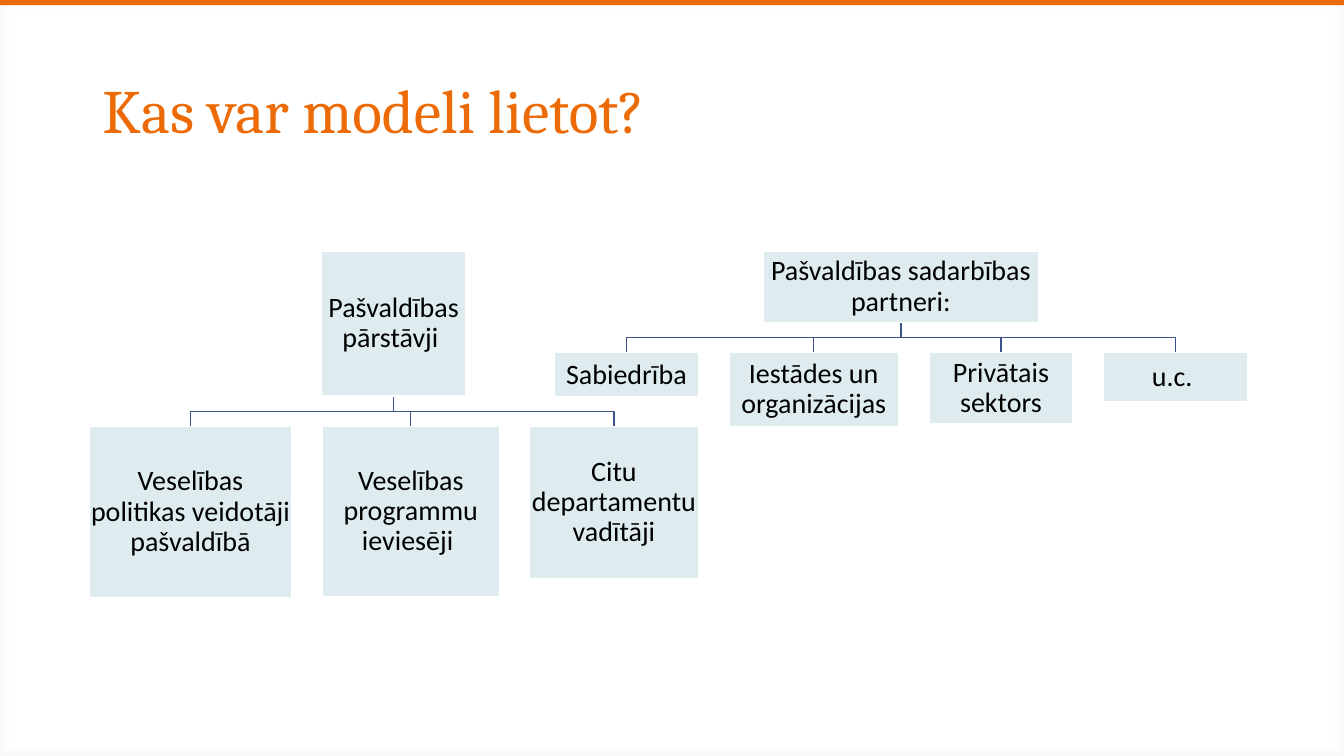
"""Build a slide with two small organisation trees under a title."""
from pptx import Presentation
from pptx.dml.color import RGBColor
from pptx.enum.shapes import MSO_SHAPE
from pptx.enum.text import MSO_ANCHOR, PP_ALIGN
from pptx.oxml import parse_xml
from pptx.util import Pt

RECT = MSO_SHAPE.RECTANGLE
MIDDLE = MSO_ANCHOR.MIDDLE
LEFT, CENTER = PP_ALIGN.LEFT, PP_ALIGN.CENTER
ORANGE = RGBColor(0xED, 0x6B, 0x06)
PALE = RGBColor(0xDE, 0xEC, 0xEF)
NAVY = RGBColor(0x3B, 0x52, 0x8A)
WHITE = RGBColor(0xFF, 0xFF, 0xFF)
BLACK = RGBColor(0, 0, 0)

TITLE = "Kas var modeli lietot?"
TREES = [
    {"left": 63.6, "root": ("Pašvaldības pārstāvji ", 103, 103.7),
     "kids": [("Veselības politikas veidotāji pašvaldībā", 145, 122.4),
              ("Veselības programmu ieviesēji ", 126.5, 121.7),
              ("Citu departamentu vadītāji", 120.5, 108.7)]},
    {"left": 396, "root": ("Pašvaldības sadarbības partneri:", 196.6, 51.1),
     "kids": [("Sabiedrība", 103, 31.7),
              ("Iestādes un organizācijas", 121.3, 52.6),
              ("Privātais sektors", 103, 50.4),
              ("u.c. ", 103, 34.6)]},
]
WIDE, HIGH = 960, 540
TOP, GAP = 179.3, 21.6
HEAD = {"name": "Cambria", "size": Pt(44)}
BODY = {"name": "Calibri", "size": Pt(20)}
BACK = """<p:bg xmlns:p="http://schemas.openxmlformats.org/presentationml/2006/main"
 xmlns:a="http://schemas.openxmlformats.org/drawingml/2006/main"><p:bgPr>
<a:gradFill rotWithShape="1"><a:gsLst>
<a:gs pos="0"><a:srgbClr val="FFFFFF"/></a:gs>
<a:gs pos="96000"><a:srgbClr val="FFFFFF"/></a:gs>
<a:gs pos="100000"><a:srgbClr val="FAFAFA"/></a:gs></a:gsLst>
<a:path path="rect"><a:fillToRect l="50000" t="50000" r="50000" b="50000"/></a:path>
</a:gradFill><a:effectLst/></p:bgPr></p:bg>"""


def write(shape, text, form, color, align):
    frame = shape.text_frame
    frame.word_wrap = True
    frame.vertical_anchor = MIDDLE
    para = frame.paragraphs[0]
    para.alignment = align
    para.line_spacing = 0.9
    run = para.add_run()
    run.text = text
    for key, value in form.items():
        setattr(run.font, key, value)
    run.font.color.rgb = color


def block(slide, left, top, width, height, fill):
    shape = slide.shapes.add_shape(RECT, Pt(left), Pt(top), Pt(width), Pt(height))
    shape.shadow.inherit = False
    shape.fill.solid()
    shape.fill.fore_color.rgb = fill
    shape.line.fill.background()
    return shape


def card(slide, text, left, top, width, height):
    shape = block(slide, left, top, width, height, PALE)
    shape.line.color.rgb = WHITE
    shape.line.width = Pt(1)
    for side in ("left", "right", "top", "bottom"):
        setattr(shape.text_frame, "margin_" + side, Pt(0.72))
    write(shape, text, BODY, BLACK, CENTER)


def link(slide, start, end, top):
    mid, low = top + GAP / 2, top + GAP
    pen = slide.shapes.build_freeform(Pt(start), Pt(top))
    turns = [(start, mid), (end, mid), (end, low)]
    pen.add_line_segments([(Pt(x), Pt(y)) for x, y in turns], close=False)
    shape = pen.convert_to_shape()
    shape.shadow.inherit = False
    shape.fill.background()
    shape.line.color.rgb = NAVY
    shape.line.width = Pt(1)


def tree(slide, left, root, kids):
    text, width, height = root
    span = sum(kid[1] for kid in kids) + GAP * (len(kids) - 1)
    axis = left + span / 2
    base = TOP + height
    spots = []
    for kid in kids:
        spots.append(left)
        link(slide, axis, left + kid[1] / 2, base)
        left += kid[1] + GAP
    card(slide, text, axis - width / 2, TOP, width, height)
    for spot, (label, wide, high) in zip(spots, kids):
        card(slide, label, spot, base + GAP, wide, high)


def main():
    deck = Presentation()
    deck.slide_width, deck.slide_height = Pt(WIDE), Pt(HIGH)
    slide = deck.slides.add_slide(deck.slide_layouts[6])
    slide.element.cSld.insert(0, parse_xml(BACK))
    block(slide, 0, 0, WIDE, 3.6, ORANGE)
    title = slide.shapes.add_textbox(Pt(66), Pt(28.8), Pt(828), Pt(104.4))
    write(title, TITLE, HEAD, ORANGE, LEFT)
    for item in TREES:
        tree(slide, **item)
    deck.save("out.pptx")


if __name__ == "__main__":
    main()
